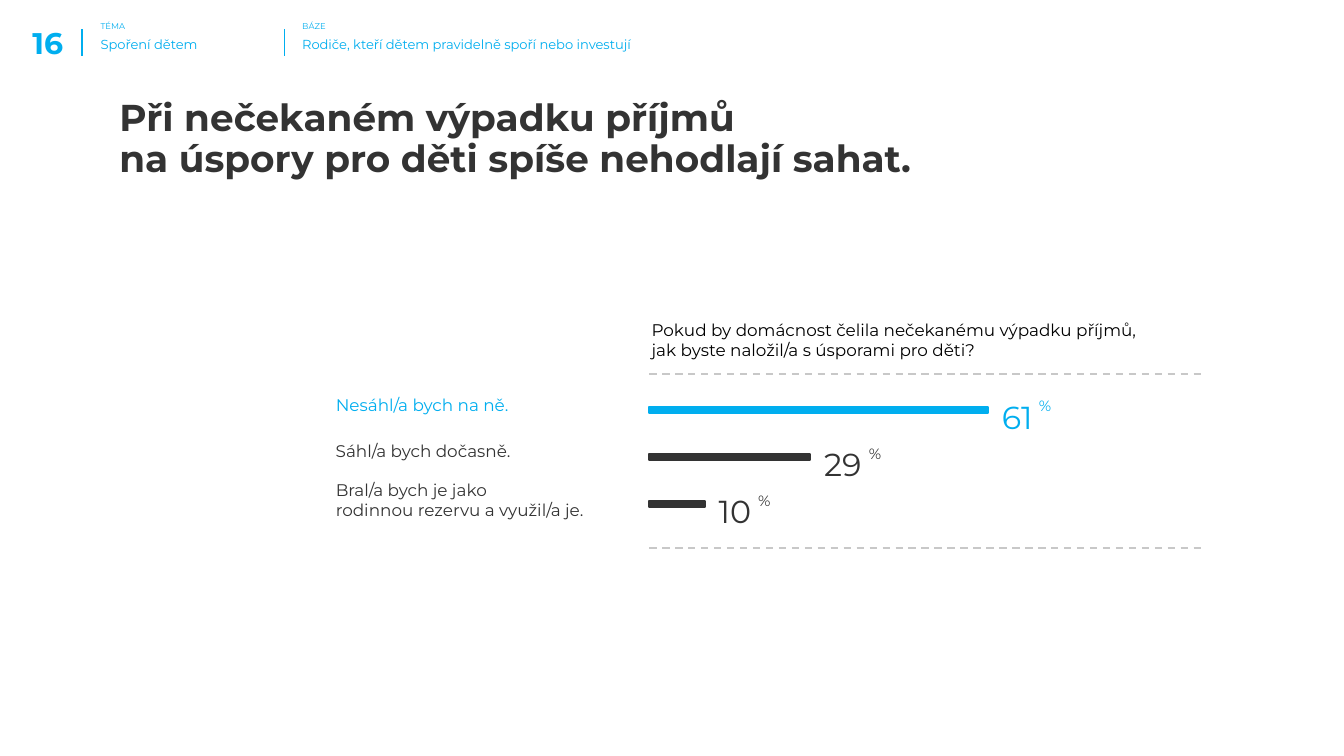
from typing import NamedTuple

from lxml.etree import SubElement
from pptx import Presentation
from pptx.dml.color import RGBColor
from pptx.enum.dml import MSO_LINE
from pptx.enum.shapes import MSO_CONNECTOR, MSO_SHAPE
from pptx.enum.text import MSO_ANCHOR, PP_ALIGN
from pptx.oxml.ns import qn
from pptx.util import Pt

FONT = "Montserrat"
BLUE = RGBColor(0x00, 0xAE, 0xEF)
DARK = RGBColor(0x33, 0x33, 0x33)
BLACK = RGBColor(0x00, 0x00, 0x00)
GRAY = RGBColor(0xC8, 0xC8, 0xC8)

INSET = 7.2
LABEL_LEFT = 172.8
BAR_LEFT, BAR_TOP, BAR_HEIGHT = 347.8, 218.2, 2.9
ROW_PITCH = 25.2
POINTS_PER_PERCENT = 2.975
RULE_RIGHT = 645.8


class LabelLine(NamedTuple):
    text: str
    top: float
    width: float


class Answer(NamedTuple):
    lines: list[LabelLine]
    percent: int
    sign_gap: float  # from the bar's end to the percent sign's box
    color: RGBColor


class HeaderItem(NamedTuple):
    caption: str
    text: str
    left: float
    width: float
    rule_x: float
    rule_width: float


ANSWERS = [
    Answer([LabelLine("Nesáhl/a bych na ně.", 205.9, 126)], 61, 20.2, BLUE),
    Answer([LabelLine("Sáhl/a bych dočasně.", 230.4, 127.4)], 29, 24.4, DARK),
    Answer([LabelLine("Bral/a bych je jako", 251.3, 114.5),
            LabelLine("rodinnou rezervu a využil/a je.", 262.1, 171.4)],
           10, 21.6, DARK),
]
HEADER = [
    HeaderItem("TÉMA", "Spoření dětem", 46.8, 82.8, 43.9, 0.75),
    HeaderItem("BÁZE", "Rodiče, kteří dětem pravidelně spoří nebo investují",
               154.8, 313.2, 152.6, 0.7),
]


def add_text(s, text: str, left: float, top: float, width: float, height: float, *,
             size: float, color: RGBColor = DARK, bold: bool = False,
             align: PP_ALIGN = PP_ALIGN.LEFT, anchor: MSO_ANCHOR = MSO_ANCHOR.TOP,
             right_inset: float = INSET, bottom_inset: float = INSET,
             line_spacing: float = 1.0) -> None:
    """Add a one-paragraph text box; newlines become line breaks."""
    box = s.shapes.add_textbox(Pt(left), Pt(top), Pt(width), Pt(height))
    tf = box.text_frame
    tf.word_wrap = True
    tf.vertical_anchor = anchor
    tf.margin_left = tf.margin_top = Pt(INSET)
    tf.margin_right, tf.margin_bottom = Pt(right_inset), Pt(bottom_inset)
    p = tf.paragraphs[0]
    p.alignment = align
    p.line_spacing = line_spacing
    for i, line in enumerate(text.split("\n")):
        if i:
            p.add_line_break()
        r = p.add_run()
        r.text = line
        r.font.name = FONT
        r.font.size = Pt(size)
        r.font.bold = bold
        r.font.color.rgb = color


def add_line(s, x1: float, y1: float, x2: float, y2: float, *,
             color: RGBColor, width: float, dashed: bool = False) -> None:
    line = s.shapes.add_connector(MSO_CONNECTOR.STRAIGHT, Pt(x1), Pt(y1), Pt(x2), Pt(y2))
    line.line.color.rgb = color
    line.line.width = Pt(width)
    if dashed:
        line.line.dash_style = MSO_LINE.DASH
    SubElement(line._element.spPr, qn("a:effectLst"))


def add_header_item(s, item: HeaderItem) -> None:
    add_line(s, item.rule_x, 15.8, item.rule_x, 29.9, color=BLUE, width=item.rule_width)
    add_text(s, item.caption, item.left, 8.6, 45.4, 30.2, size=4.5, color=BLUE)
    add_text(s, item.text, item.left, 15.1, item.width, 20.9, size=7, color=BLUE)


def add_answer(s, answer: Answer, bar_top: float) -> None:
    """Add one row: label, bar, number and percent sign."""
    color = answer.color
    for line in answer.lines:
        add_text(s, line.text, LABEL_LEFT, line.top, line.width, 25.2, size=9, color=color)

    length = answer.percent * POINTS_PER_PERCENT
    bar = s.shapes.add_shape(MSO_SHAPE.RECTANGLE, Pt(BAR_LEFT), Pt(bar_top),
                             Pt(length), Pt(BAR_HEIGHT))
    bar.shadow.inherit = False
    bar.fill.solid()
    bar.fill.fore_color.rgb = color
    bar.line.color.rgb = color
    bar.line.width = Pt(1)

    end = BAR_LEFT + length
    add_text(s, str(answer.percent), end + 0.3, bar_top - 12.4, 46, 27.4,
             size=17, color=color)
    add_text(s, "%", end + answer.sign_gap, bar_top - 10.3, 33.1, 20.9,
             size=8, color=color)


def main() -> None:
    prs = Presentation()
    prs.slide_width, prs.slide_height = Pt(720), Pt(405)
    s = prs.slides.add_slide(prs.slide_layouts[6])

    add_text(s, "16", 0, 0, 33.8, 32.4, size=16, color=BLUE, bold=True,
             align=PP_ALIGN.RIGHT, anchor=MSO_ANCHOR.BOTTOM,
             right_inset=0, bottom_inset=0)
    for item in HEADER:
        add_header_item(s, item)

    add_text(s, "Při nečekaném výpadku příjmů\nna úspory pro děti spíše nehodlají sahat.",
             56.9, 46.1, 473.8, 36, size=20, bold=True, line_spacing=0.9)
    add_text(s, "Pokud by domácnost čelila nečekanému výpadku příjmů,\n"
                "jak byste naložil/a s úsporami pro děti?",
             342, 164.2, 313.2, 25.2, size=9, color=BLACK)

    for y in (200.2, 293.8):
        add_line(s, BAR_LEFT, y, RULE_RIGHT, y, color=GRAY, width=1, dashed=True)
    for i, answer in enumerate(ANSWERS):
        add_answer(s, answer, BAR_TOP + i * ROW_PITCH)

    prs.save("out.pptx")


if __name__ == "__main__":
    main()
